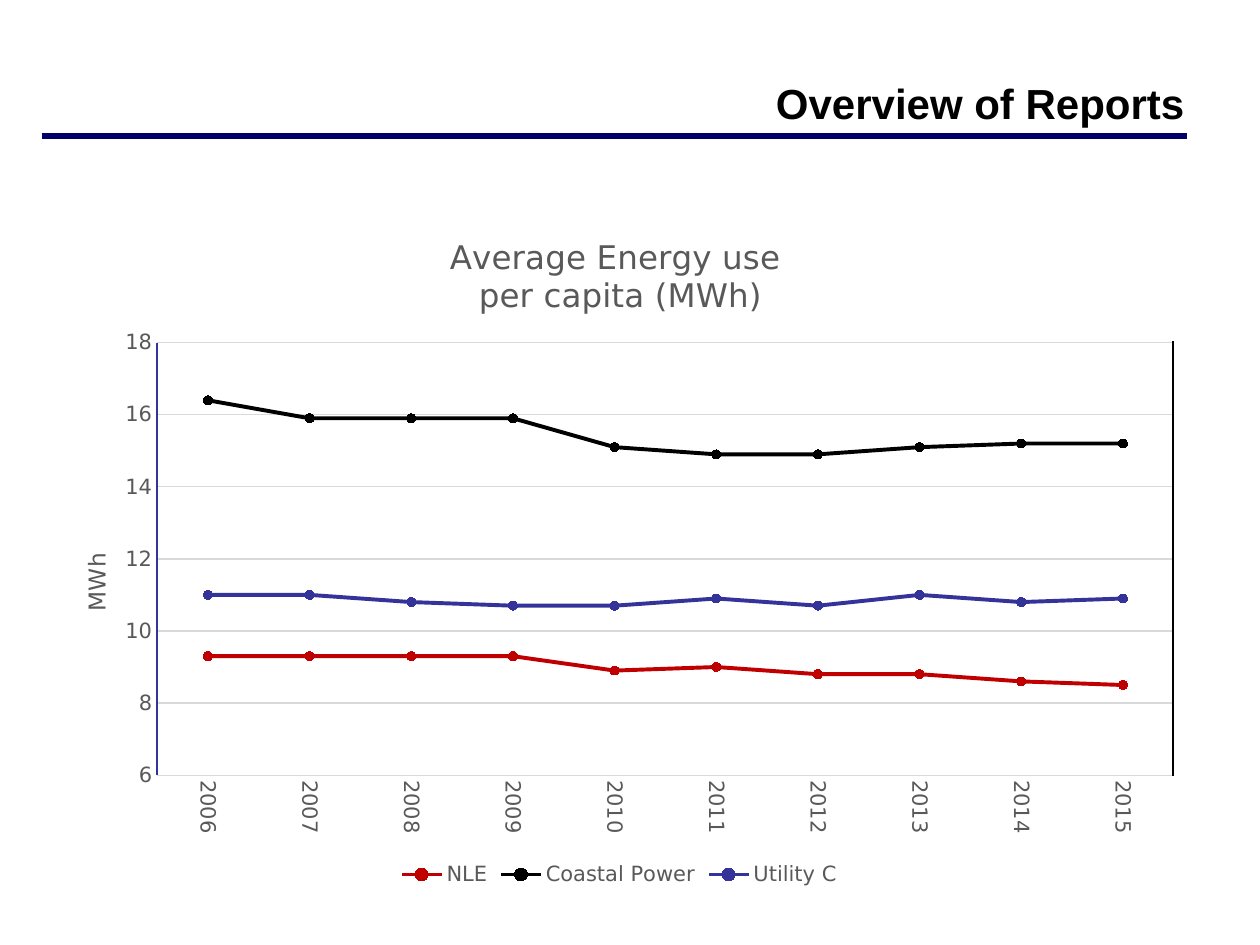
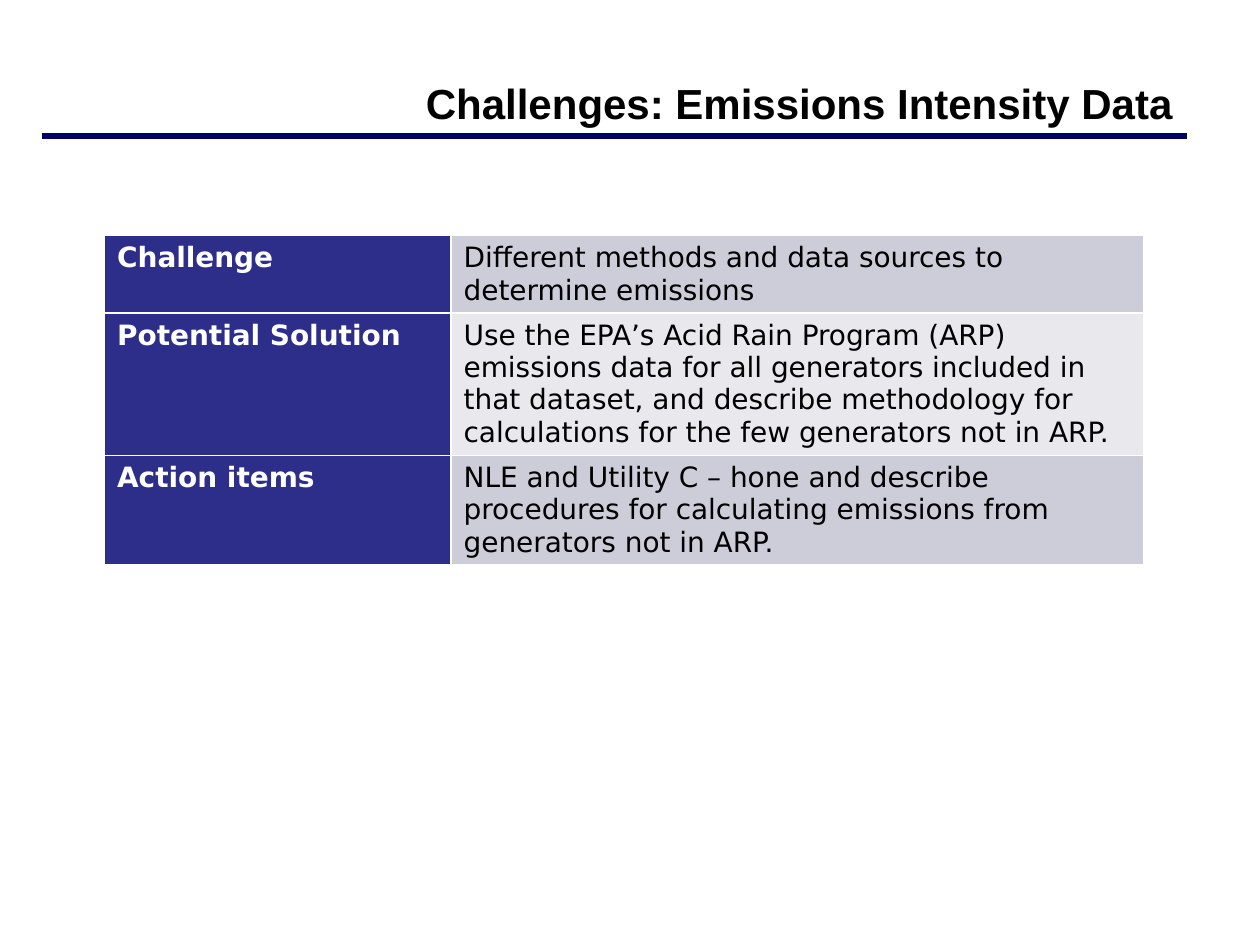
from lxml.etree import SubElement
from pptx import Presentation
from pptx.chart.data import CategoryChartData
from pptx.dml.color import RGBColor
from pptx.enum.chart import (XL_CHART_TYPE, XL_LEGEND_POSITION,
                             XL_MARKER_STYLE, XL_TICK_MARK)
from pptx.enum.shapes import MSO_CONNECTOR
from pptx.enum.text import MSO_ANCHOR, MSO_AUTO_SIZE, PP_ALIGN
from pptx.oxml.ns import qn
from pptx.util import Inches, Pt

BLACK = RGBColor(0x00, 0x00, 0x00)
WHITE = RGBColor(0xFF, 0xFF, 0xFF)
NAVY = RGBColor(0x00, 0x00, 0x66)
BLUE = RGBColor(0x33, 0x33, 0x99)
RED = RGBColor(0xC0, 0x00, 0x00)
GREY = RGBColor(0x59, 0x59, 0x59)
PALE = RGBColor(0xD9, 0xD9, 0xD9)
HEAD = RGBColor(0x2D, 0x2D, 0x8A)
BANDS = (RGBColor(0xCD, 0xCD, 0xDA), RGBColor(0xE8, 0xE8, 0xED))

SANS = "DejaVu Sans"
TITLE = dict(name="Arial", size=Pt(24), bold=True)
CELL = dict(name=SANS, size=Pt(16))
LABEL = dict(name=SANS, size=Pt(12), bold=False)

YEARS = [str(year) for year in range(2006, 2016)]
USE = {
    "NLE": (RED, (9.3, 9.3, 9.3, 9.3, 8.9, 9, 8.8, 8.8, 8.6, 8.5)),
    "Coastal Power": (BLACK, (16.4, 15.9, 15.9, 15.9, 15.1,
                              14.9, 14.9, 15.1, 15.2, 15.2)),
    "Utility C": (BLUE, (11, 11, 10.8, 10.7, 10.7,
                         10.9, 10.7, 11, 10.8, 10.9)),
}
ISSUES = (
    ("Challenge", "Different methods and data sources to determine emissions"),
    ("Potential Solution",
     "Use the EPA’s Acid Rain Program (ARP) emissions data for all generators "
     "included in that dataset, and describe methodology for calculations for "
     "the few generators not in ARP."),
    ("Action items",
     "NLE and Utility C – hone and describe procedures for calculating "
     "emissions from generators not in ARP."),
)


def style(font, form, color):
    for key, value in form.items():
        setattr(font, key, value)
    font.color.rgb = color


def place(owner, **spots):
    """Fix a chart part at fractions of the chart's size."""
    layout = owner.find(qn("c:layout"))
    if layout is None:
        layout = SubElement(owner, qn("c:layout"))
        owner.insert(0, layout)
    manual = SubElement(layout, qn("c:manualLayout"))
    if "w" in spots:
        SubElement(manual, qn("c:layoutTarget")).set("val", "inner")
    for key in ("x", "y"):
        SubElement(manual, qn(f"c:{key}Mode")).set("val", "edge")
    for key, value in spots.items():
        SubElement(manual, qn(f"c:{key}")).set("val", str(value))


def edge(cell, color, width):
    """Draw all four borders of a table cell."""
    props = cell._tc.get_or_add_tcPr()
    for spot, side in enumerate(("lnL", "lnR", "lnT", "lnB")):
        line = SubElement(props, qn(f"a:{side}"), w=str(width))
        fill = SubElement(line, qn("a:solidFill"))
        SubElement(fill, qn("a:srgbClr"), val=str(color))
        props.insert(spot, line)


class Deck:
    def __init__(self):
        self.show = Presentation()
        self.show.slide_width = Inches(10)
        self.show.slide_height = Inches(7.5)
        self.slide = None

    def page(self, title):
        self.slide = self.show.slides.add_slide(self.show.slide_layouts[5])
        self.line((0.33, 1.08), (9.42, 1.08), NAVY, 3)
        box = self.slide.shapes.title
        box.left, box.top = Inches(2.67), Inches(0.55)
        box.width, box.height = Inches(6.83), Inches(0.53)
        frame = box.text_frame
        frame.text = title
        frame.auto_size = MSO_AUTO_SIZE.NONE
        frame.vertical_anchor = MSO_ANCHOR.MIDDLE
        para = frame.paragraphs[0]
        para.alignment = PP_ALIGN.RIGHT
        style(para.font, TITLE, BLACK)

    def line(self, start, end, color, width):
        ends = [Inches(value) for value in start + end]
        line = self.slide.shapes.add_connector(MSO_CONNECTOR.STRAIGHT, *ends)
        line.line.color.rgb = color
        line.line.width = Pt(width)
        SubElement(line._element.spPr, qn("a:effectLst"))

    def caption(self, owner, text, size, **spots):
        """Give a chart or an axis its title."""
        frame = owner.text_frame
        frame.text = text
        for para in frame.paragraphs:
            style(para.font, LABEL | dict(size=Pt(size)), GREY)
        place(owner._element, **spots)
        return frame

    def chart(self, years, lines):
        data = CategoryChartData(number_format="0.0")
        data.categories = years
        for name, (_, values) in lines.items():
            data.add_series(name, values)
        chart = self.slide.shapes.add_chart(
            XL_CHART_TYPE.LINE_MARKERS, Inches(0.33), Inches(1.63),
            Inches(9.17), Inches(5.45), data).chart
        style(chart.font, LABEL, GREY)
        place(chart._chartSpace.chart.plotArea, x=0.1, y=0.2, w=0.88, h=0.63)
        self.caption(chart.chart_title, "Average Energy use \nper capita (MWh)",
                     18.6, x=0.35, y=0.04)
        chart.has_legend = True
        chart.legend.position = XL_LEGEND_POSITION.BOTTOM
        chart.legend.include_in_layout = False
        style(chart.legend.font, LABEL, GREY)
        chart.plots[0].vary_by_categories = False
        for series, (color, _) in zip(chart.plots[0].series, lines.values()):
            series.smooth = False
            series.format.line.color.rgb = color
            series.format.line.width = Pt(2.25)
            mark = series.marker
            mark.style, mark.size = XL_MARKER_STYLE.CIRCLE, 5
            mark.format.fill.solid()
            mark.format.fill.fore_color.rgb = color
            mark.format.line.color.rgb = color
        self.axes(chart.category_axis, chart.value_axis)

    def axes(self, across, up):
        for axis, color in ((across, PALE), (up, BLUE)):
            axis.major_tick_mark = axis.minor_tick_mark = XL_TICK_MARK.NONE
            axis.format.line.color.rgb = color
            axis.format.line.width = Pt(0.75)
            style(axis.tick_labels.font, LABEL, GREY)
        turn = across._element.find(qn("c:txPr")).find(qn("a:bodyPr"))
        turn.set("rot", "5400000")
        turn.set("vert", "horz")
        up.minimum_scale, up.maximum_scale, up.major_unit = 6, 18, 2
        up.tick_labels.number_format = "0"
        up.tick_labels.number_format_is_linked = False
        up.major_gridlines.format.line.color.rgb = PALE
        up.major_gridlines.format.line.width = Pt(0.75)
        frame = self.caption(up.axis_title, "MWh", 13.3, x=0.03, y=0.5)
        frame._txBody.bodyPr.set("rot", "-5400000")
        frame._txBody.bodyPr.set("vert", "horz")

    def table(self, rows, widths, heights):
        table = self.slide.shapes.add_table(
            len(rows), len(widths), Inches(0.83), Inches(1.87),
            Inches(sum(widths)), Inches(sum(heights))).table
        table.first_row, table.first_col = False, True
        for col, width in zip(table.columns, widths):
            col.width = Inches(width)
        for r, (row, height) in enumerate(zip(rows, heights)):
            table.rows[r].height = Inches(height)
            for c, text in enumerate(row):
                cell = table.cell(r, c)
                cell.text = text
                cell.fill.solid()
                cell.fill.fore_color.rgb = BANDS[r % 2] if c else HEAD
                edge(cell, WHITE, Pt(1))
                style(cell.text_frame.paragraphs[0].font,
                      CELL | dict(bold=c == 0), BLACK if c else WHITE)


def main():
    deck = Deck()
    deck.page("Overview of Reports")
    deck.chart(YEARS, USE)
    deck.line((9.31, 2.71), (9.31, 6.16), BLACK, 0.75)
    deck.page("Challenges: Emissions Intensity Data ")
    deck.table(ISSUES, (2.75, 5.5), (0.61, 1.13, 0.86))
    deck.show.save("out.pptx")


if __name__ == "__main__":
    main()
